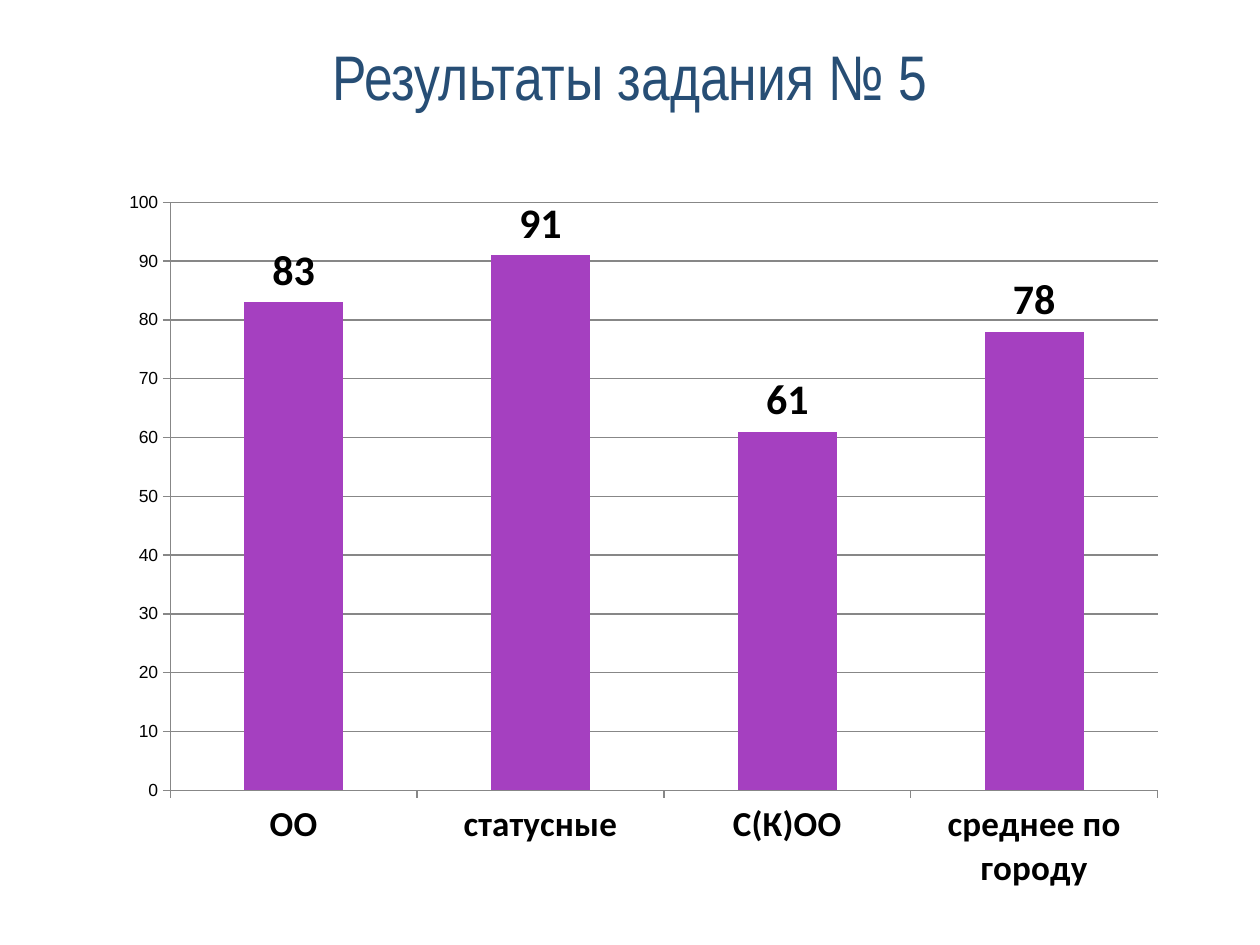
from pptx import Presentation
from pptx import util as u
from pptx.chart.data import CategoryChartData
from pptx.dml.color import RGBColor
from pptx.enum import chart as charts, text

PX = 914400 // 126
TITLE = "Результаты задания № 5"
RESULTS = [("ОО", 83), ("статусные", 91), ("С(К)ОО", 61), ("среднее по городу", 78)]
TITLE_BOX = (0, 39, 1260, 73)
CHART_BOX = (108, 178, 1071, 726)
BLUE, PURPLE, BLACK, GRAY = "274E75", "A540C0", "000000", "878787"


def color(value):
    return RGBColor.from_string(value)


def emu(box):
    return [side * PX for side in box]


def style(font, name, size, value, bold=False):
    font.name = name
    font.size = u.Pt(size)
    font.bold = bold
    font.color.rgb = color(value)


def add_title(page):
    title = page.shapes.title
    title.left, title.top, title.width, title.height = emu(TITLE_BOX)
    frame = title.text_frame
    frame.vertical_anchor = text.MSO_ANCHOR.MIDDLE
    para = frame.paragraphs[0]
    para.alignment = text.PP_ALIGN.CENTER
    span = para.add_run()
    span.text = TITLE
    style(span.font, "Arial Narrow", 36, BLUE)


def add_results(page):
    data = CategoryChartData()
    data.categories = [name for name, score in RESULTS]
    data.add_series("Series 1", [score for name, score in RESULTS])
    kind = charts.XL_CHART_TYPE.COLUMN_CLUSTERED
    chart = page.shapes.add_chart(kind, *emu(CHART_BOX), data).chart
    chart.has_legend = False
    chart.has_title = False
    style(chart.font, "Arial", 10, BLACK)

    for axis in (chart.category_axis, chart.value_axis):
        axis.major_tick_mark = charts.XL_TICK_MARK.OUTSIDE
        axis.minor_tick_mark = charts.XL_TICK_MARK.NONE
        axis.format.line.color.rgb = color(GRAY)
        axis.format.line.width = u.Pt(0.75)
    style(chart.category_axis.tick_labels.font, "Calibri", 20, BLACK, True)
    scores = chart.value_axis
    scores.minimum_scale, scores.maximum_scale, scores.major_unit = 0, 100, 10
    scores.has_major_gridlines = True
    scores.major_gridlines.format.line.color.rgb = color(GRAY)
    scores.major_gridlines.format.line.width = u.Pt(0.75)

    plot = chart.plots[0]
    plot.gap_width = 150
    plot.vary_by_categories = False
    series = plot.series[0]
    series.format.fill.solid()
    series.format.fill.fore_color.rgb = color(PURPLE)
    labels = series.data_labels
    labels.show_value = True
    labels.position = charts.XL_LABEL_POSITION.OUTSIDE_END
    style(labels.font, "Calibri", 24, BLACK, True)


def main():
    deck = Presentation()
    deck.slide_width, deck.slide_height = u.Inches(10), u.Inches(7.5)
    page = deck.slides.add_slide(deck.slide_layouts[5])
    add_title(page)
    add_results(page)
    deck.save("out.pptx")


if __name__ == "__main__":
    main()
